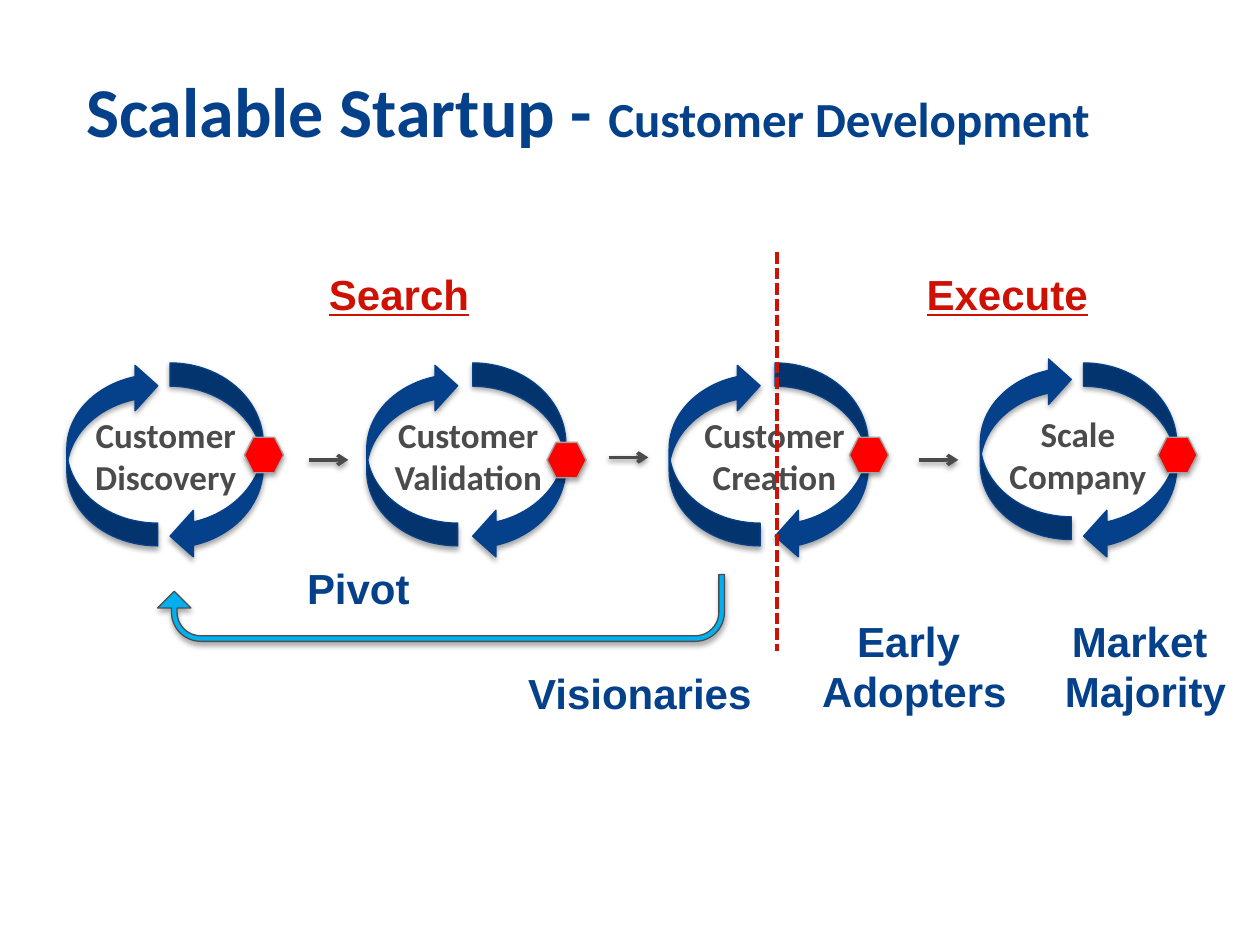
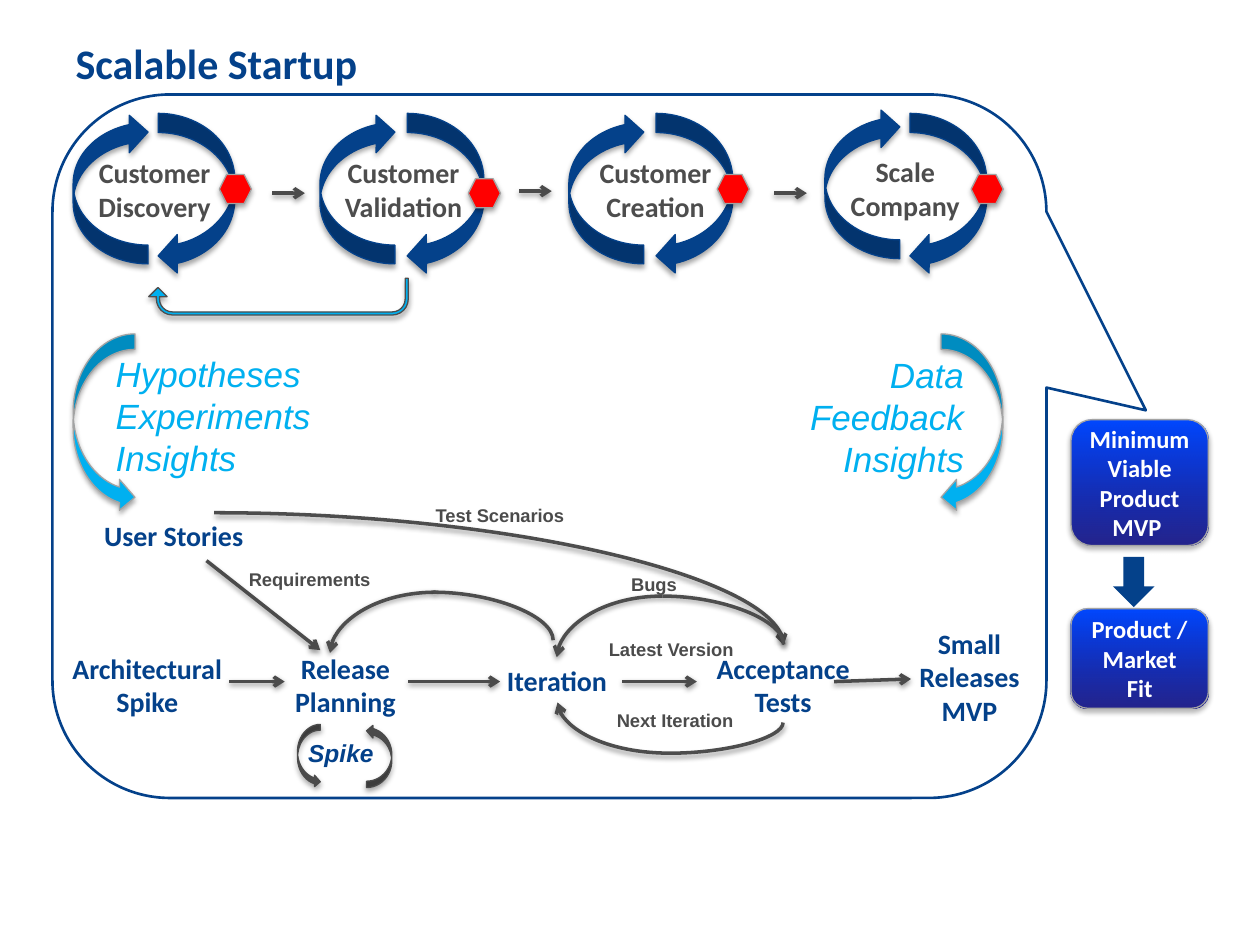
"""Build two slides on customer development in a scalable startup."""
from lxml.etree import SubElement
from pptx import Presentation
from pptx.dml.color import RGBColor
from pptx.enum.dml import MSO_LINE as Dash
from pptx.enum.shapes import MSO_CONNECTOR as Link, MSO_SHAPE as Kind
from pptx.enum.text import MSO_ANCHOR as Anchor, PP_ALIGN as Align
from pptx.oxml.ns import qn
from pptx.util import Pt

NAVY, RED, SKY, WHITE = "04418A", "CE1102", "00B0F0", "FFFFFF"
GREY, SLATE, SILVER, HEX = "4B4B4B", "4D4D4D", "A3A3A3", "FF0000"
BEND = (0.084, 0.25, 0.25, 0.438, 0.75)

# text, left, right arrow, label left, rise of left arrow, hexagon top
STAGES = [
    ("Customer Discovery", 0, 59, 5.8, 0, 42.5),
    ("Customer Validation", 171.4, 60.5, 7.2, 0, 45.4),
    ("Customer Creation", 344.2, 60.5, 9.4, 0, 42.5),
    ("Scale Company", 522, 59, 5, 3.6, 42.5),
]
STEPS = [(138.2, 55.4), (309.6, 54), (486.7, 55.4)]

HEADS = [("Search", 180, 96), ("Execute", 522, 107)]
CROWDS = [
    ("Visionaries ", 294, 378, 150),
    ("Early \nAdopters", 462, 348, 121),
    ("Pivot", 168, 318, 73.5),
    ("Market\n Majority", 594, 348, 114.5),
]

TASKS = [
    ("Small Releases\nMVP", 510, 354.2, 88),
    ("User Stories", 35.3, 293, 128),
    ("Architectural Spike", 30.2, 368.6, 108),
    ("Release Planning", 153.4, 368.6, 88),
    ("Iteration", 274.3, 375.8, 88),
    ("Acceptance Tests", 398.2, 368.6, 98.6),
]
NOTES = [
    ("Requirements", 126, 321.1, 102),
    ("Test Scenarios", 234.7, 284.4, 102),
    ("Bugs", 350, 324, 47.5),
    ("Latest Version", 332.6, 361.4, 102),
    ("Next Iteration", 334.8, 401.8, 102),
]
MOVES = [
    (118, 320.4, 183, 371.5),
    (131, 389.5, 162.7, 389.5),
    (233.3, 389.5, 285.8, 389.5),
    (355.7, 389.5, 398.2, 389.5),
    (476.6, 389.5, 520.6, 388),
]
# ends of each arc, and whether it has an arrowhead
ARCS = [
    ((122.4, 293, 447.8, 368.6), True),
    ((378.7, 340.6, 318.2, 375.5), True),
    ((378.7, 340.6, 447.8, 368.3), False),
    ((249, 338.4, 188.6, 373), True),
    ((247.7, 338.4, 316.1, 365.8), False),
]
LISTS = [
    ("Hypotheses\nExperiments\nInsights", 59, 198, 126.7, Align.LEFT),
    ("Data\nFeedback\nInsights", 455, 198.7, 103, Align.RIGHT),
]
GOALS = [
    ("Product / Market Fit", 347.8, 56.9),
    ("Minimum\nViable Product MVP ", 239.8, 72),
]


def rgb(code):
    """Turn a hex string into a colour."""
    return RGBColor.from_string(code)


def shade(item, alpha=0, dist=0):
    """Give an item a soft shadow below it, or none."""
    fx = SubElement(item._element.spPr, qn("a:effectLst"))
    if alpha:
        drop = SubElement(fx, qn("a:outerShdw"), blurRad=str(Pt(3.1)),
                          dist=str(Pt(dist)), dir="5400000", rotWithShape="0")
        tint = SubElement(drop, qn("a:srgbClr"), val="000000")
        SubElement(tint, qn("a:alpha"), val=str(alpha * 1000))


def style(frame, size, color, face="Calibri", bold=True, slant=False,
          under=False, align=Align.CENTER):
    """Format every run of a text frame."""
    for para in frame.paragraphs:
        para.alignment = align
        for run in para.runs:
            font = run.font
            font.name, font.size, font.bold = face, Pt(size), bold
            font.italic, font.underline = slant, under
            font.color.rgb = rgb(color)


def label(box, text, x, y, w, size, color, wrap=True, **look):
    """Add a text box."""
    high = (text.count("\n") + 1) * size * 1.2 + 7.2
    frame = box.add_textbox(Pt(x), Pt(y), Pt(w), Pt(high)).text_frame
    frame.word_wrap = wrap
    frame.text = text
    style(frame, size, color, **look)


def shape(box, kind, x, y, w, h, fill=None, line=None, width=0.75,
          flip=None, turn=0, adj=()):
    """Add a preset shape, with a shadow if it has fill and line."""
    item = box.add_shape(kind, Pt(x), Pt(y), Pt(w), Pt(h))
    item.rotation = turn
    for i, value in enumerate(adj):
        item.adjustments[i] = value
    if flip:
        item._element.spPr.xfrm.set(flip, "1")
    if fill:
        item.fill.solid()
        item.fill.fore_color.rgb = rgb(fill)
    else:
        item.fill.background()
    if line:
        item.line.color.rgb = rgb(line)
        item.line.width = Pt(width)
    else:
        item.line.fill.background()
    shade(item, 35 if fill and line else 0, 1.8)
    return item


def wire(box, ends, color, head=True, kind=Link.STRAIGHT):
    """Add a line or a curve with a shadow."""
    item = box.add_connector(kind, *map(Pt, ends))
    item.line.color.rgb = rgb(color)
    item.line.width = Pt(2)
    if head:
        SubElement(item.line._get_or_add_ln(), qn("a:tailEnd"), type="arrow")
    shade(item, 38, 1.6)
    return item


def arc(box, ends, head):
    """Add a quarter curve."""
    item = wire(box, ends, SLATE, head, Link.CURVE)
    item._element.spPr.find(qn("a:prstGeom")).set("prst", "curvedConnector2")


def loop(box):
    """Add the curve that returns from the tests to the iteration."""
    item = wire(box, (388.8, 342.7, 377.3, 471.6), SLATE, True, Link.CURVE)
    item._element.spPr.xfrm.set("rot", "5400000")
    geom = item._element.spPr.find(qn("a:prstGeom"))
    SubElement(geom.get_or_add_avLst(), qn("a:gd"), name="adj1",
               fmla="val -152100")


def chain(slide, left, top, k, size, color):
    """Draw the four stages with their arrows at scale k."""
    box = slide.shapes.add_group_shape().shapes

    def part(kind, x, y, w, h, *look, **more):
        shape(box, kind, left + x * k, top + y * k, w * k, h * k,
              *look, **more)

    for _, x, right, _, rise, _ in STAGES:
        part(Kind.CURVED_RIGHT_ARROW, x, -rise, 52, 104.5, NAVY, NAVY,
             flip="flipV")
        part(Kind.CURVED_LEFT_ARROW, x + right, 0, 53.3, 112.3, NAVY, NAVY)
    for _, x, right, _, _, y in STAGES:
        part(Kind.HEXAGON, x + right + 42.5, y, 22.3, 20.2, HEX, SILVER)
    for x, y in STEPS:
        y = top + y * k
        wire(box, (left + x * k, y, left + (x + 22.7) * k, y), GREY)
    for text, x, _, gap, rise, _ in STAGES:
        label(box, text, left + (x + gap) * k, top + (25.2 - rise / 5) * k,
              101.5 * k, size, color)
    return box


def page(deck, parts, y, h, x):
    """Add a slide with its title."""
    slide = deck.slides.add_slide(deck.slide_layouts[5])
    title = slide.shapes.title
    title.left, title.top, title.width, title.height = map(Pt, (x, y, 600, h))
    frame = title.text_frame
    frame.vertical_anchor = Anchor.MIDDLE
    para = frame.paragraphs[0]
    para.line_spacing = Pt(28)
    for text, _ in parts:
        para.add_run().text = text
    style(frame, 24, NAVY, align=Align.LEFT)
    for run, (_, size) in zip(para.runs, parts):
        run.font.size = Pt(size)
    return slide


def badge(box, text, y, h):
    """Add a goal on a blue gradient."""
    item = shape(box, Kind.ROUNDED_RECTANGLE, 612, y, 78.5, h, NAVY, SILVER)
    item.fill.gradient()
    item.fill.gradient_angle = 90
    for stop, code in zip(item.fill.gradient_stops, ("000082", "0047FF")):
        stop.color.rgb = rgb(code)
    dark = next(item._element.spPr.iter(qn("a:srgbClr")))
    SubElement(dark, qn("a:alpha"), val="80000")
    frame = item.text_frame
    frame.word_wrap = True
    frame.vertical_anchor = Anchor.MIDDLE
    frame.text = text
    style(frame, 14, WHITE)


def phases(deck):
    """Build the slide that splits search from execution."""
    slide = page(deck, [("Scalable Startup - ", 40),
                        ("Customer Development", 28)], 30.2, 84.2, 42)
    box = slide.shapes
    group = chain(slide, 38.2, 207.4, 1, 20, GREY)
    shape(group, Kind.U_TURN_ARROW, 90, 328.3, 324, 38.2, SKY, SLATE,
          turn=180, adj=BEND)
    split = box.add_connector(Link.STRAIGHT, *map(Pt, (444, 144, 444, 372)))
    split.line.color.rgb = rgb(RED)
    split.line.width = Pt(2.25)
    split.line.dash_style = Dash.SQUARE_DOT
    shade(split)
    for text, x, w in HEADS:
        label(box, text, x, 150, w, 24, RED, False, face="Arial", under=True)
    for text, x, y, w in CROWDS:
        label(box, text, x, y, w, 24, NAVY, False, face="Arial")


def process(deck):
    """Build the slide that adds the development process."""
    slide = page(deck, [("Scalable Startup", 24)], 18, 36, 36)
    box = slide.shapes
    shape(box, Kind.ROUNDED_RECTANGULAR_CALLOUT, 30, 54, 568, 402, None,
          NAVY, 1.5, adj=(0.6, -0.051, 0.167))
    flow = box.add_group_shape().shapes
    shape(flow, Kind.CURVED_UP_ARROW, 198.7, 424.8, 36, 14.4, GREY, GREY,
          turn=270)
    shape(flow, Kind.CURVED_RIGHT_ARROW, 170, 414, 13, 36, GREY, GREY)
    for task in TASKS:
        label(flow, *task, 16, NAVY)
    label(flow, "Spike", 166.3, 418.3, 57, 14, NAVY, face="Arial", slant=True)
    for ends in MOVES:
        wire(flow, ends, GREY)
    loop(flow)
    for ends, head in ARCS:
        arc(flow, ends, head)
    for note in NOTES:
        label(flow, *note, 10.5, GREY, face="Arial")
    group = chain(slide, 41.8, 64.8, 0.823, 16, SLATE)
    shape(group, Kind.U_TURN_ARROW, 85, 159, 148.3, 21, SKY, SLATE,
          turn=180, adj=BEND)
    for x, flip in ((41.8, None), (537.8, "flipH")):
        shape(box, Kind.CURVED_RIGHT_ARROW, x, 190.8, 35.3, 102.2, SKY,
              SILVER, flip=flip)
    for text, x, y, w, align in LISTS:
        label(box, text, x, y, w, 20, SKY, False, face="Arial", bold=False,
              slant=True, align=align)
    for goal in GOALS:
        badge(box, *goal)
    shape(box, Kind.DOWN_ARROW, 636, 318.2, 23.8, 28.8, NAVY)


def main():
    """Build and save the deck."""
    deck = Presentation()
    deck.slide_width, deck.slide_height = Pt(720), Pt(540)
    phases(deck)
    process(deck)
    deck.save("out.pptx")


if __name__ == "__main__":
    main()
